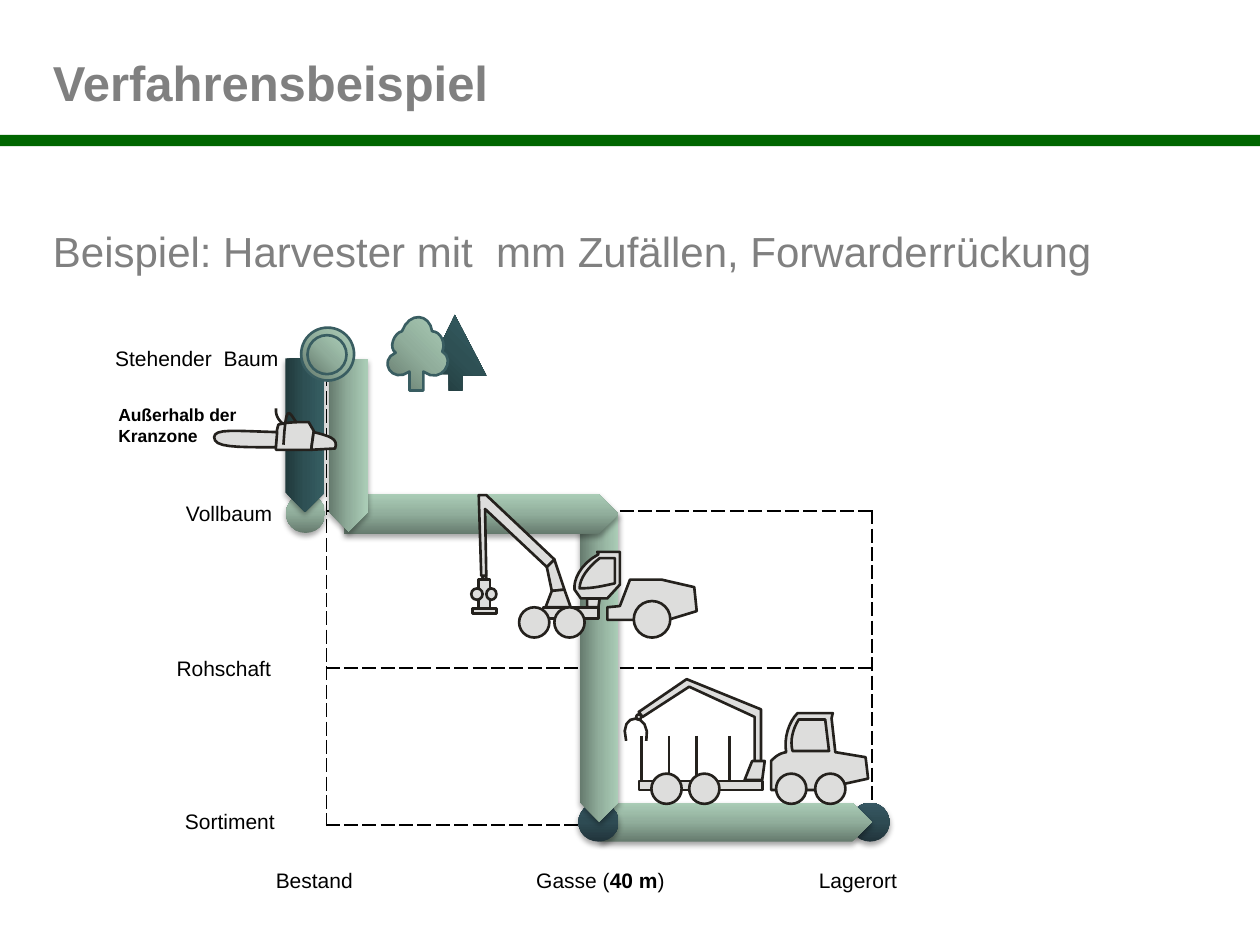
from copy import deepcopy
from lxml import etree
from pptx import Presentation
from pptx import util as u
from pptx.dml.color import RGBColor
from pptx.enum import shapes, text
from pptx.oxml.ns import qn

INK = {"bar": "006600", "title": "808080", "text": "000000", "line": "24211D",
       "metal": "DDDDDC", "rim": "395D61"}
FADE = {"sage": ("657A6D", "90AD9B", "ABCDB7"),
        "blue": ("21343B", "2E4B53", "375863"),
        "teal": ("20393B", "2E5054", "365F64")}
KIND = shapes.MSO_SHAPE
LEFT, MID, RIGHT = text.PP_ALIGN.LEFT, text.PP_ALIGN.CENTER, text.PP_ALIGN.RIGHT
STEPS = 8  # chords per curve


def rgb(name):
    return RGBColor.from_string(INK[name])


def blend(fill, name, angle):
    fill.gradient()
    fill.gradient_angle = angle
    first = fill.gradient_stops[0]._gs
    first.addnext(deepcopy(first))
    for stop, tone, place in zip(fill.gradient_stops, FADE[name], (0, 0.5, 1)):
        stop.color.rgb = RGBColor.from_string(tone)
        stop.position = place


def paint(shape, fill="metal", edge="line", angle=45):
    shape.shadow.inherit = False
    if fill in FADE:
        blend(shape.fill, fill, angle)
    elif fill:
        shape.fill.solid()
        shape.fill.fore_color.rgb = rgb(fill)
    else:
        shape.fill.background()
    if edge:
        shape.line.color.rgb = rgb(edge)
        shape.line.width = u.Pt(1.5)
    else:
        shape.line.fill.background()
    return shape


def block(slide, kind, box, *look):
    return paint(slide.shapes.add_shape(kind, *map(u.Inches, box)), *look)


def solid(slide, kind, box, fill, turn=0):
    """Borderless gradient shape with a soft shadow below."""
    shape = block(slide, kind, box, fill, None, 90)
    shape.rotation = turn
    glow = etree.SubElement(shape._element.spPr.find(qn("a:effectLst")), qn("a:outerShdw"),
                            blurRad="40000", dist="23000", dir="5400000", rotWithShape="0")
    tone = etree.SubElement(glow, qn("a:srgbClr"), val="000000")
    etree.SubElement(tone, qn("a:alpha"), val="35000")


def trace(points):
    """Turn corners (x, y) and Bezier curves (six numbers) into plain points."""
    spots = [points[0]]
    for part in points[1:]:
        if len(part) == 2:
            spots.append(part)
            continue
        knots = [spots[-1], part[:2], part[2:4], part[4:]]
        for step in range(1, STEPS + 1):
            t = step / STEPS
            rates = ((1 - t) ** 3, 3 * t * (1 - t) ** 2, 3 * t * t * (1 - t), t ** 3)
            spots.append(tuple(sum(r * k[i] for r, k in zip(rates, knots)) for i in (0, 1)))
    return [(u.Inches(x), u.Inches(y)) for x, y in spots]


def outline(slide, points, *look, close=True):
    spots = trace(points)
    pen = slide.shapes.build_freeform(*spots[0])
    pen.add_line_segments(spots[1:], close=close)
    paint(pen.convert_to_shape(), *look)


def engine(slide, plates, bars=(), wheels=(), wires=()):
    for points in plates:
        outline(slide, points)
    for box in bars:
        block(slide, KIND.RECTANGLE, box)
    for box in wheels:
        block(slide, KIND.OVAL, box)
    for points in wires:
        outline(slide, points, None, close=False)


def post(slide, x, top, base):
    line = slide.shapes.add_connector(shapes.MSO_CONNECTOR.STRAIGHT,
                                      *map(u.Inches, (x, top, x, base)))
    line.line.color.rgb = rgb("line")
    line.line.width = u.Pt(1.5)
    etree.SubElement(line._element.spPr, qn("a:effectLst"))


def write(frame, runs, size, tone="text", align=LEFT, bold=None):
    para = frame.paragraphs[0]
    para.alignment = align
    for words, strong in runs:
        run = para.add_run()
        run.text = words
        if strong:
            run.font.bold = True
    para.font.name, para.font.size, para.font.bold = "Arial", u.Pt(size), bold
    para.font.color.rgb = rgb(tone)


def label(slide, box, words, align=LEFT, size=12, bold=None):
    frame = slide.shapes.add_textbox(*map(u.Inches, box)).text_frame
    frame.word_wrap = align != RIGHT
    runs = [(words, False)] if isinstance(words, str) else words
    write(frame, runs, size, align=align, bold=bold)


def heading(shape, box, words, size, bold):
    shape.left, shape.top, shape.width, shape.height = map(u.Inches, box)
    frame = shape.text_frame
    frame.word_wrap = True
    frame.auto_size = text.MSO_AUTO_SIZE.NONE
    frame.vertical_anchor = text.MSO_ANCHOR.MIDDLE
    frame.margin_left = 0
    write(frame, [(words, False)], size, "title", bold=bold)


def rule(cell, sides):
    cell.fill.background()
    props = cell._tc.get_or_add_tcPr()
    for spot, side in enumerate("LRTB"):
        line = etree.Element(qn("a:ln" + side), w="12700")
        if side in sides:
            fill = etree.SubElement(line, qn("a:solidFill"))
            etree.SubElement(fill, qn("a:srgbClr"), val=INK["text"])
            etree.SubElement(line, qn("a:prstDash"), val="dash")
        else:
            etree.SubElement(line, qn("a:noFill"))
        props.insert(spot, line)


def grid(slide):
    table = slide.shapes.add_table(3, 2, *map(u.Inches, (2.59, 2.81, 4.33, 3.74))).table
    table.first_row = table.horz_banding = False
    for row, line in enumerate(table.rows):
        for col, cell in enumerate(line.cells):
            rule(cell, "LRTB" if row else ("LB", "B")[col])


def trees(slide):
    outline(slide, [(3.67, 3.1), (3.67, 2.98), (3.86, 2.98), (3.61, 2.5), (3.38, 2.97),
                    (3.56, 2.97), (3.56, 3.1)], "teal", None)
    outline(slide, [(3.25, 3.1), (3.36, 3.1), (3.36, 2.95), (3.51, 3.06, 3.62, 2.85, 3.51, 2.79),
                    (3.54, 2.73, 3.5, 2.63, 3.43, 2.63), (3.41, 2.49, 3.25, 2.47, 3.19, 2.63),
                    (3.13, 2.64, 3.08, 2.76, 3.14, 2.8), (3, 2.86, 3.11, 3.05, 3.25, 2.95)],
            "sage", "rim")


def reaper(slide):
    block(slide, KIND.OVAL, (3.83, 4.57, 0.03, 0.03), None)
    engine(slide, [
        [(4.75, 4.4), (4.74, 4.38), (4.92, 4.38), (4.92, 4.64), (4.82, 4.75), (4.61, 4.75),
         (4.56, 4.68), (4.55, 4.61, 4.6, 4.48, 4.75, 4.4)],
        [(4.76, 4.43), (4.67, 4.5, 4.6, 4.59, 4.6, 4.67), (4.71, 4.67, 4.79, 4.65, 4.88, 4.63),
         (4.88, 4.43), (4.83, 4.43, 4.8, 4.43, 4.76, 4.43)],
        [(4.82, 4.82), (4.82, 4.92), (5.3, 4.92), (5.53, 4.85), (5.51, 4.66), (5.25, 4.6),
         (5, 4.6), (4.92, 4.81)],
        [(4.34, 4.5), (4.38, 4.69), (4.48, 4.68), (4.4, 4.44)],
        [(4.53, 4.82), (4.48, 4.68), (4.38, 4.69), (4.33, 4.82)],
        [(4.66, 4.75), (4.76, 4.75), (4.75, 4.82), (4.66, 4.82)],
        [(4.4, 4.44), (3.86, 3.93), (3.8, 3.93), (3.82, 4.57), (3.86, 4.57), (3.85, 4.04),
         (4.34, 4.5)]],
        [(4.31, 4.82, 0.44, 0.09), (3.8, 4.6, 0.09, 0.23), (3.75, 4.83, 0.19, 0.04)],
        [(3.74, 4.67, 0.09, 0.09), (3.86, 4.67, 0.08, 0.09), (4.12, 4.82, 0.24, 0.24),
         (4.4, 4.82, 0.24, 0.24), (5.03, 4.77, 0.29, 0.29)])


def hauler(slide):
    for x in (5.09, 5.31, 5.53, 5.79):
        post(slide, x, 5.84, 6.19)
    engine(slide, [
        [(6.48, 6.27), (6.89, 6.18), (6.87, 6.01), (6.63, 5.97), (6.6, 5.7), (6.61, 5.66),
         (6.33, 5.66), (6.26, 5.73, 6.22, 5.86, 6.24, 5.97), (6.18, 5.98, 6.15, 6.01, 6.12, 6.04),
         (6.12, 6.27)],
        [(6.04, 6.1), (6.04, 5.63), (5.45, 5.39), (5.07, 5.65), (5.1, 5.69), (5.47, 5.45),
         (5.99, 5.69), (5.99, 6.1)],
        [(5.97, 6.04), (5.91, 6.19), (6.05, 6.19), (6.07, 6.04)],
        [(6.55, 5.71), (6.58, 5.96), (6.29, 5.96), (6.27, 5.88, 6.29, 5.79, 6.34, 5.71)]],
        [(5.07, 6.2, 0.98, 0.07)],
        [(x, 6.14, 0.24, 0.24) for x in (5.17, 5.47, 6.16, 6.47)] + [(5.05, 5.67, 0.04, 0.04)],
        [[(4.97, 5.88), (4.9, 5.64, 5.18, 5.65, 5.13, 5.88)]])


def saw(slide):
    engine(slide, [
        [(2.19, 3.57), (2.47, 3.57), (2.49, 3.42), (2.45, 3.35), (2.36, 3.35, 2.28, 3.35, 2.21, 3.37),
         (2.19, 3.43, 2.19, 3.49, 2.19, 3.57)],
        [(2.47, 3.57), (2.66, 3.56), (2.69, 3.48, 2.61, 3.46, 2.49, 3.43)],
        [(2.19, 3.55), (1.86, 3.55, 1.7, 3.55, 1.7, 3.47), (1.7, 3.4, 1.87, 3.42, 2.2, 3.43)]],
        wires=[[(2.35, 3.35), (2.29, 3.26, 2.27, 3.2, 2.25, 3.53)],
               [(2.24, 3.36), (2.19, 3.31, 2.19, 3.28, 2.19, 3.24)]])


def main():
    deck = Presentation()
    deck.slide_width, deck.slide_height = u.Inches(10), u.Inches(7.5)
    slide = deck.slides.add_slide(deck.slide_layouts[5])

    # Headings and green bar
    block(slide, KIND.RECTANGLE, (0, 1.07, 10, 0.09), "bar", None)
    heading(slide.shapes.title, (0.42, 1.78, 8.38, 0.42),
            "Beispiel: Harvester mit  mm Zufällen, Forwarderrückung", 24, False)
    heading(slide.shapes.add_textbox(0, 0, 0, 0), (0.42, 0.44, 3.92, 0.42),
            "Verfahrensbeispiel", 28, True)

    # Process path over the dashed grid
    grid(slide)
    solid(slide, KIND.OVAL, (6.75, 6.37, 0.31, 0.31), "blue")
    solid(slide, KIND.PENTAGON, (4.76, 6.37, 2.16, 0.31), "sage")
    solid(slide, KIND.OVAL, (4.59, 6.37, 0.32, 0.31), "blue")
    solid(slide, KIND.PENTAGON, (3.53, 5.14, 2.45, 0.31), "sage", 90)
    solid(slide, KIND.PENTAGON, (2.73, 3.92, 2.18, 0.32), "sage")
    solid(slide, KIND.PENTAGON, (2.08, 3.38, 1.37, 0.31), "sage", 90)

    # Axis labels
    for words, top in (("Stehender  Baum", 2.69), ("Vollbaum", 3.92),
                       ("Rohschaft", 5.15), ("Sortiment", 6.37)):
        label(slide, (0.8, top, {2.69: 1.51, 3.92: 1.46, 5.15: 1.45}.get(top, 1.48), 0.3),
              words, RIGHT)
    label(slide, (2.09, 6.84, 0.99, 0.3), "Bestand")
    label(slide, (3.92, 6.84, 1.69, 0.3),
          [("Gasse (", False), ("40 m", True), (")", False)], MID)
    label(slide, (6.4, 6.84, 0.99, 0.3), "Lagerort")

    # Trees and machines
    trees(slide)
    reaper(slide)
    hauler(slide)

    # Side branch with chainsaw, and the starting point
    label(slide, (0.84, 3.16, 1.41, 0.44), "Außerhalb der Kranzone", size=10, bold=True)
    solid(slide, KIND.OVAL, (2.27, 3.92, 0.31, 0.31), "sage")
    solid(slide, KIND.PENTAGON, (1.81, 3.3, 1.22, 0.31), "teal", 90)
    saw(slide)
    for box in ((2.39, 2.6, 0.42, 0.42), (2.44, 2.66, 0.31, 0.31)):
        block(slide, KIND.OVAL, box, "sage", "rim")
    deck.save("out.pptx")


if __name__ == "__main__":
    main()
